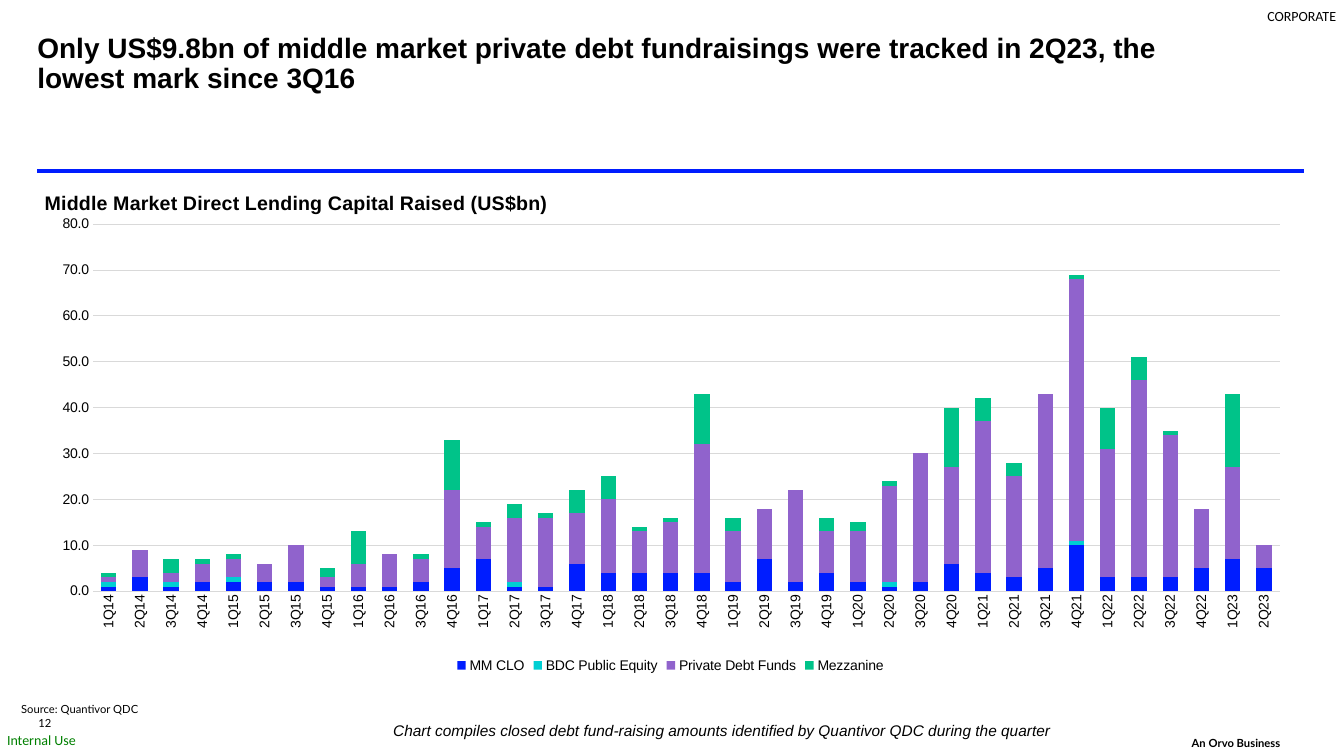
from lxml import etree
from pptx import Presentation
from pptx import util as u
from pptx.chart.data import CategoryChartData
from pptx.dml.color import RGBColor
from pptx.enum import chart as charts, shapes, text
from pptx.oxml import parse_xml
from pptx.oxml.ns import nsdecls, qn

THEME = {
    "ink": RGBColor.from_string("000000"),
    "blue": RGBColor.from_string("001DFF"),
    "cyan": RGBColor.from_string("00CFD3"),
    "purple": RGBColor.from_string("9063CC"),
    "mint": RGBColor.from_string("00C389"),
    "grid": RGBColor.from_string("D9D9D9"),
    "green": RGBColor.from_string("008000"),
    "headline": 20, "chart title": 14, "note": 11, "label": 10, "small": 8,
}


def style(font, name, size, color="ink", **extra):
    for key, value in {"name": name, "size": u.Pt(THEME[size]), **extra}.items():
        setattr(font, key, value)
    font.color.rgb = THEME[color]


def place(element, **fractions):
    for old in element.findall(qn("c:layout")):
        element.remove(old)
    layout = parse_xml(f"<c:layout {nsdecls('c')}><c:manualLayout/></c:layout>")
    for tag, value in fractions.items():
        etree.SubElement(layout[0], qn(f"c:{tag}"), val=str(value))
    return layout


deck = Presentation()
deck.slide_width, deck.slide_height = u.Inches(13.33), u.Inches(7.5)
page = deck.slides.add_slide(deck.slide_layouts[5])

title = page.shapes.title
for side, value in zip(("left", "top", "width", "height"), (0.37, 0.34, 11.22, 1.3)):
    setattr(title, side, u.Inches(value))
frame = title.text_frame
frame.text = ("Only US$9.8bn of middle market private debt fundraisings were "
              "tracked in 2Q23, the lowest mark since 3Q16")
for key, value in {"margin_left": 0, "margin_top": 0, "margin_right": 0, "margin_bottom": 0,
                   "word_wrap": True, "auto_size": text.MSO_AUTO_SIZE.NONE,
                   "vertical_anchor": text.MSO_ANCHOR.TOP}.items():
    setattr(frame, key, value)
para = frame.paragraphs[0]
para.alignment = text.PP_ALIGN.LEFT
para.line_spacing = 0.9
style(para.font, "Arial", "headline", bold=True)

rule = page.shapes.add_connector(shapes.MSO_CONNECTOR.STRAIGHT, u.Inches(0.37), u.Inches(1.7),
                                 u.Inches(12.93), u.Inches(1.7))
rule.line.color.rgb = THEME["blue"]
rule.line.width = u.Pt(3)
etree.SubElement(rule._element.spPr, qn("a:effectLst"))

SERIES = [
    ("MM CLO", "blue",
     [1, 3, 1, 2, 2, 2, 2, 1, 1, 1, 2, 5, 7, 1, 1, 6, 4, 4, 4, 4,
      2, 7, 2, 4, 2, 1, 2, 6, 4, 3, 5, 10, 3, 3, 3, 5, 7, 5]),
    ("BDC Public Equity", "cyan",
     [1, 0, 1, 0, 1, 0, 0, 0, 0, 0, 0, 0, 0, 1, 0, 0, 0, 0, 0, 0,
      0, 0, 0, 0, 0, 1, 0, 0, 0, 0, 0, 1, 0, 0, 0, 0, 0, 0]),
    ("Private Debt Funds", "purple",
     [1, 6, 2, 4, 4, 4, 8, 2, 5, 7, 5, 17, 7, 14, 15, 11, 16, 9, 11, 28,
      11, 11, 20, 9, 11, 21, 28, 21, 33, 22, 38, 57, 28, 43, 31, 13, 20, 5]),
    ("Mezzanine", "mint",
     [1, 0, 3, 1, 1, 0, 0, 2, 7, 0, 1, 11, 1, 3, 1, 5, 5, 1, 1, 11,
      3, 0, 0, 3, 2, 1, 0, 13, 5, 3, 0, 1, 9, 5, 1, 0, 16, 0]),
]
data = CategoryChartData(number_format="0.0")
data.categories = [f"{n % 4 + 1}Q{14 + n // 4}" for n in range(38)]
for name, color, values in SERIES:
    data.add_series(name, values)
chart = page.shapes.add_chart(charts.XL_CHART_TYPE.COLUMN_STACKED, u.Inches(0.37), u.Inches(1.78),
                              u.Inches(12.56), u.Inches(4.94), data).chart
style(chart.font, "Arial", "label")

plot = chart.plots[0]
for key, value in {"gap_width": 104, "overlap": 100, "vary_by_categories": False}.items():
    setattr(plot, key, value)
for series, (name, color, values) in zip(plot.series, SERIES):
    series.format.fill.solid()
    series.format.fill.fore_color.rgb = THEME[color]

chart.has_title = True
heading = chart.chart_title
heading.include_in_layout = False
heading.text_frame.text = "Middle Market Direct Lending Capital Raised (US$bn)"
style(heading.text_frame.paragraphs[0].runs[0].font, "Arial", "chart title", bold=True)
heading_layout = place(heading._element, xMode="edge", yMode="edge", x=0.003, y=0.014)
heading._element.find(qn("c:tx")).addnext(heading_layout)

area = chart._chartSpace.chart.plotArea
area.insert(0, place(area, layoutTarget="inner", xMode="edge", yMode="edge",
                     x=0.044, y=0.09, w=0.937, h=0.737))

chart.has_legend = True
chart.legend.position = charts.XL_LEGEND_POSITION.BOTTOM
chart.legend.include_in_layout = False
style(chart.legend.font, "Arial", "label")

quarters, amounts = chart.category_axis, chart.value_axis
for key, value in {"minimum_scale": 0, "maximum_scale": 80, "major_unit": 10,
                   "has_major_gridlines": True}.items():
    setattr(amounts, key, value)
amounts.tick_labels.number_format = "0.0"
amounts.tick_labels.number_format_is_linked = False
for axis in (quarters, amounts):
    axis.major_tick_mark = axis.minor_tick_mark = charts.XL_TICK_MARK.NONE
    style(axis.tick_labels.font, "Arial", "label")
for line in (quarters.format.line, amounts.major_gridlines.format.line):
    line.color.rgb = THEME["grid"]
    line.width = u.Pt(0.75)
amounts.format.line.fill.background()
quarters._element.find(qn("c:txPr")).find(qn("a:bodyPr")).set("rot", "-5400000")

TOP, BOTTOM = text.MSO_ANCHOR.TOP, text.MSO_ANCHOR.BOTTOM
LABELS = [
    ("12", (0.38, 7.04, 0.39, 0.2), BOTTOM, "Lato", "small", "ink", {}),
    ("An Orvo Business", (11.82, 7.24, 1.73, 0.2), BOTTOM, "Lato", "small", "ink", {"bold": True}),
    ("CORPORATE", (12.57, 0.07, 0.73, 0.17), TOP, "Calibri", "label", "ink", {}),
    ("Internal Use", (0.07, 7.26, 0.72, 0.17), TOP, "Calibri", "label", "green", {}),
    ("Source: Quantivor QDC", (0.21, 6.9, 5.89, 0.2), BOTTOM, "Lato", "small", "ink", {}),
    ("Chart compiles closed debt fund-raising amounts identified by Quantivor QDC during the quarter",
     (3.9, 7.15, 6.56, 0.19), TOP, "Arial", "note", "ink", {"italic": True}),
]
for words, spot, anchor, font, size, color, extra in LABELS:
    box = page.shapes.add_textbox(*map(u.Inches, spot))
    frame = box.text_frame
    for key, value in {"margin_left": 0, "margin_top": 0, "margin_right": 0, "margin_bottom": 0,
                       "word_wrap": True, "vertical_anchor": anchor}.items():
        setattr(frame, key, value)
    span = frame.paragraphs[0].add_run()
    span.text = words
    style(span.font, font, size, color, **extra)

deck.save("out.pptx")
